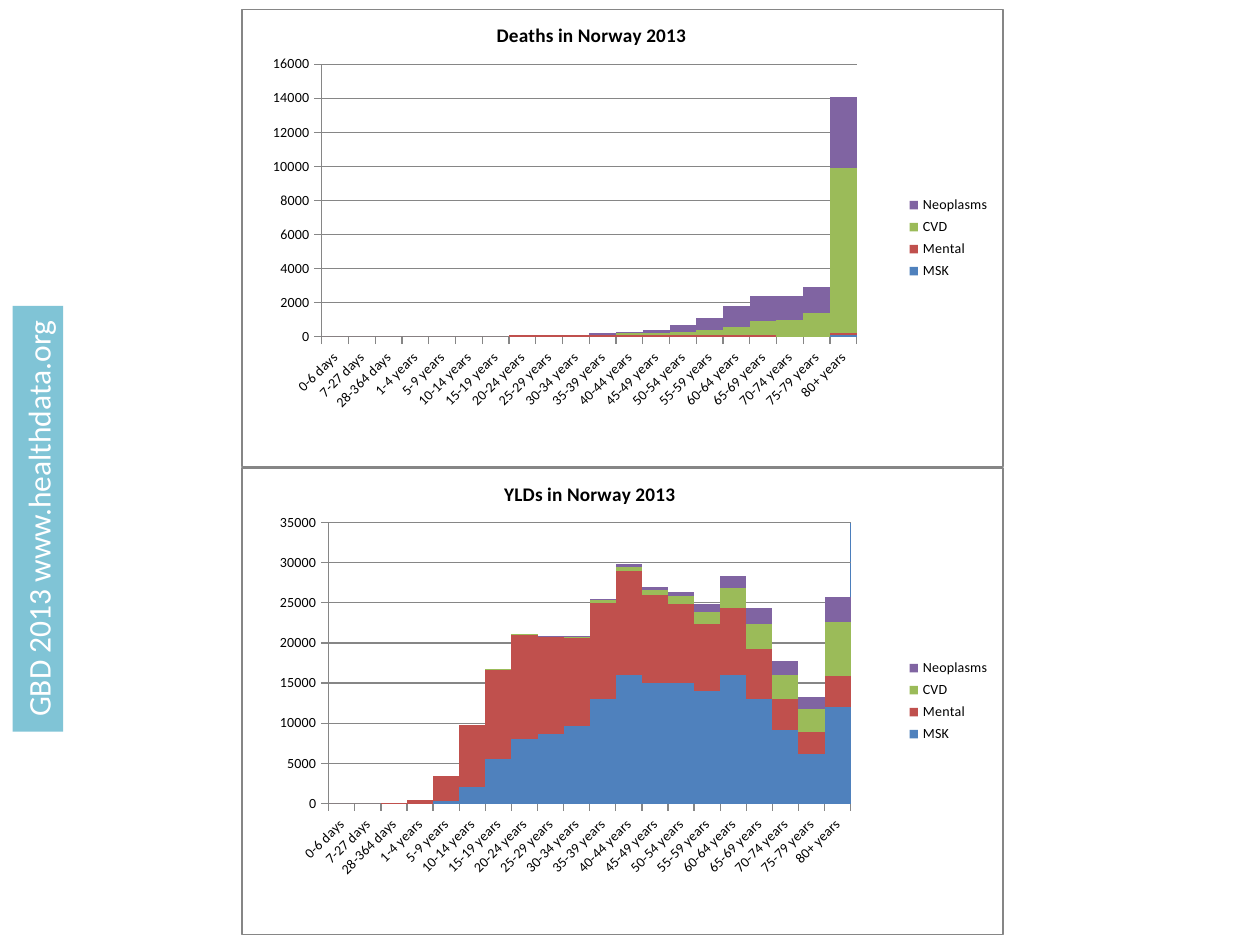
from lxml import etree
from pptx import Presentation
from pptx.chart.data import CategoryChartData
from pptx.dml.color import RGBColor
from pptx.enum.chart import XL_CHART_TYPE, XL_LEGEND_POSITION, XL_TICK_MARK
from pptx.enum.shapes import MSO_SHAPE
from pptx.enum.text import MSO_ANCHOR, PP_ALIGN
from pptx.oxml import parse_xml
from pptx.oxml.ns import nsdecls, qn
from pptx.util import Pt

STACKED = XL_CHART_TYPE.COLUMN_STACKED
RIGHT = XL_LEGEND_POSITION.RIGHT
OUTSIDE, NO_TICK = XL_TICK_MARK.OUTSIDE, XL_TICK_MARK.NONE
RECTANGLE = MSO_SHAPE.RECTANGLE
MIDDLE, CENTER = MSO_ANCHOR.MIDDLE, PP_ALIGN.CENTER

AGES = (["0-6 days", "7-27 days", "28-364 days", "1-4 years"]
        + [f"{age}-{age + 4} years" for age in range(5, 80, 5)] + ["80+ years"])
CAUSES = {"MSK": "4F81BD", "Mental": "C0504D", "CVD": "9BBB59", "Neoplasms": "8064A2"}
DEATHS = [
    [0] * 19 + [100],
    [0] * 7 + [100] * 10 + [0, 0, 100],
    [0] * 11 + [100, 100, 200, 300, 500, 800, 1000, 1400, 9700],
    [0] * 10 + [100, 100, 200, 400, 700, 1200, 1500, 1400, 1500, 4200],
]
YLDS = [
    [0, 0, 0, 0, 300, 2100, 5600, 8000, 8700, 9600,
     13000, 16000, 15000, 15000, 14000, 16000, 13000, 9100, 6200, 12000],
    [0, 0, 100, 400, 3100, 7700, 11000, 13000, 12000, 11000,
     12000, 13000, 11000, 9900, 8400, 8300, 6200, 3900, 2700, 3900],
    [0] * 6 + [100, 100, 100, 100, 300, 500, 600, 900, 1500, 2500, 3100, 3000, 2900, 6700],
    [0] * 8 + [100, 100, 200, 300, 400, 600, 1000, 1600, 2000, 1700, 1500, 3100],
]


def color(value):
    return RGBColor.from_string(value)


def outline(value):
    return parse_xml(
        f'<c:spPr {nsdecls("c", "a")}><a:noFill/><a:ln w="9525"><a:solidFill>'
        f'<a:srgbClr val="{value}"/></a:solidFill></a:ln></c:spPr>')


def manual_layout(**settings):
    layout = parse_xml(f'<c:layout {nsdecls("c")}><c:manualLayout/></c:layout>')
    for name, value in settings.items():
        etree.SubElement(layout[0], qn(f"c:{name}")).set("val", str(value))
    return layout


class Page:
    """Holds the style and the current slide, and adds its elements."""

    font = "Calibri"
    ink, gray, blue, teal, white = "000000", "868686", "4B7EBC", "4BACC6", "FFFFFF"

    def __init__(self, deck):
        self.slide = deck.slides.add_slide(deck.slide_layouts[6])

    def style(self, font, size, value, bold=False):
        font.name, font.size, font.bold = self.font, Pt(size), bold
        font.color.rgb = color(value)

    def chart(self, title, title_left, rows, top, height, plot_box, maximum, step,
              framed=False):
        data = CategoryChartData()
        data.categories = AGES
        for cause, values in zip(CAUSES, rows):
            data.add_series(cause, values)
        frame = self.slide.shapes.add_chart(
            STACKED, Pt(137.9), Pt(top), Pt(435.6), Pt(height), data)
        chart = frame.chart
        self.style(chart.font, 8, self.ink)
        plot = chart.plots[0]
        plot.gap_width, plot.overlap, plot.vary_by_categories = 0, 100, False
        for series, value in zip(plot.series, CAUSES.values()):
            series.format.fill.solid()
            series.format.fill.fore_color.rgb = color(value)
        self.heading(chart, title, title_left)
        chart.has_legend = True
        chart.legend.position = RIGHT
        chart.legend.include_in_layout = False
        self.style(chart.legend.font, 8, self.ink)
        self.axes(chart, maximum, step)
        self.place_plot(chart, plot_box, framed)

    def heading(self, chart, title, left):
        chart.has_title = True
        chart.chart_title.text_frame.text = title
        span = chart.chart_title.text_frame.paragraphs[0].runs[0]
        self.style(span.font, 11, self.ink, True)
        heading = chart.element.find(".//" + qn("c:title"))
        for layout in heading.findall(qn("c:layout")):
            heading.remove(layout)
        heading.find(qn("c:tx")).addnext(
            manual_layout(xMode="edge", yMode="edge", x=left, y=0.02))
        heading.find(qn("c:overlay")).set("val", "1")

    def axes(self, chart, maximum, step):
        values, ages = chart.value_axis, chart.category_axis
        values.minimum_scale, values.maximum_scale, values.major_unit = 0, maximum, step
        values.has_major_gridlines = True
        for axis in (values, ages):
            axis.major_tick_mark, axis.minor_tick_mark = OUTSIDE, NO_TICK
            self.style(axis.tick_labels.font, 8, self.ink)
        for part in (values, ages, values.major_gridlines):
            part.format.line.color.rgb = color(self.gray)
            part.format.line.width = Pt(0.75)
        ages_body = chart.element.find(".//" + qn("c:catAx")).find(".//" + qn("a:bodyPr"))
        ages_body.set("rot", "-60000000")

    def place_plot(self, chart, plot_box, framed):
        area = chart.element.find(".//" + qn("c:plotArea"))
        for layout in area.findall(qn("c:layout")):
            area.remove(layout)
        area.insert(0, manual_layout(layoutTarget="inner", xMode="edge", yMode="edge",
                                     **dict(zip("xywh", plot_box))))
        if framed:
            area.append(outline(self.blue))
        chart.element.find(qn("c:chart")).addnext(outline(self.gray))

    def banner(self, text, left, top, width, height):
        box = self.slide.shapes.add_shape(
            RECTANGLE, Pt(left), Pt(top), Pt(width), Pt(height))
        box.rotation = 270
        box.shadow.inherit = False
        box.line.fill.background()
        box.fill.solid()
        box.fill.fore_color.rgb = color(self.teal)
        shade = box.element.spPr.find(qn("a:solidFill"))[0]
        etree.SubElement(shade, qn("a:alpha")).set("val", "70000")
        frame = box.text_frame
        frame.text = text
        frame.word_wrap, frame.vertical_anchor = False, MIDDLE
        para = frame.paragraphs[0]
        para.alignment = CENTER
        self.style(para.runs[0].font, 18, self.white)


def main():
    deck = Presentation()
    deck.slide_width, deck.slide_height = Pt(720), Pt(540)
    page = Page(deck)
    page.chart("Deaths in Norway 2013", 0.33, DEATHS, 5.04, 262.08,
               (0.105, 0.12, 0.703, 0.596), 16000, 2000)
    page.chart("YLDs in Norway 2013", 0.34, YLDS, 267.12, 267.12,
               (0.114, 0.117, 0.686, 0.603), 35000, 5000, framed=True)
    page.banner("GBD 2013 www.healthdata.org", -100, 282, 243.36, 28.8)
    deck.save("out.pptx")


if __name__ == "__main__":
    main()
